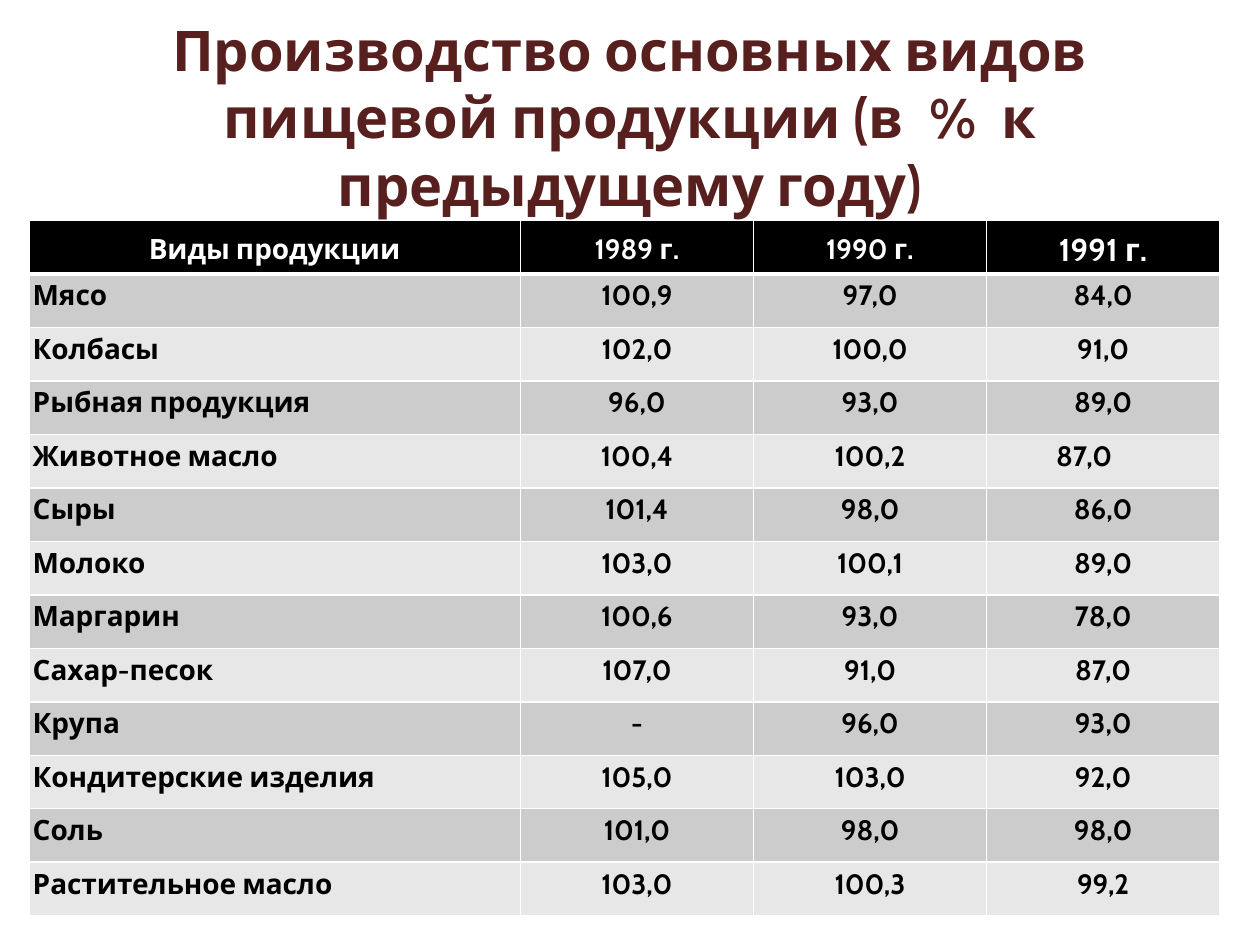
from lxml.etree import SubElement
from pptx import Presentation
from pptx.dml.color import RGBColor
from pptx.enum.text import MSO_ANCHOR, MSO_AUTO_SIZE, PP_ALIGN
from pptx.oxml.ns import qn
from pptx.util import Inches, Pt

FONT = "Cabin"
MAROON = RGBColor(0x57, 0x20, 0x1F)
BLACK = RGBColor(0, 0, 0)
WHITE = RGBColor(0xFF, 0xFF, 0xFF)
BANDS = RGBColor(0xCC, 0xCC, 0xCC), RGBColor(0xE7, 0xE7, 0xE7)

TITLE = "Производство основных видов пищевой продукции (в  %  к предыдущему году)"
HEADER = ("Виды продукции", "1989 г.", "1990 г.", "1991 г.")
PRODUCTS = [
    ("Мясо", "100,9", "97,0", "84,0"),
    ("Колбасы", "102,0", "100,0", "91,0"),
    ("Рыбная продукция", "96,0", "93,0", "89,0"),
    ("Животное масло", "100,4", "100,2", "87,0"),
    ("Сыры", "101,4", "98,0", "86,0"),
    ("Молоко", "103,0", "100,1", "89,0"),
    ("Маргарин", "100,6", "93,0", "78,0"),
    ("Сахар-песок", "107,0", "91,0", "87,0"),
    ("Крупа", "-", "96,0", "93,0"),
    ("Кондитерские изделия", "105,0", "103,0", "92,0"),
    ("Соль", "101,0", "98,0", "98,0"),
    ("Растительное масло", "103,0", "100,3", "99,2"),
]
COL_WIDTHS = (3.9, 1.85, 1.85, 1.85)
TABLE_HEIGHT = 5.52


def set_attrs(obj, values):
    for name, value in values.items():
        setattr(obj, name, value)


def write(tf, text, size, color, align, spacing=None):
    p = tf.paragraphs[0]
    set_attrs(p, {"alignment": align, "line_spacing": spacing})
    r = p.add_run()
    r.text = text
    set_attrs(r.font, {"name": FONT, "size": Pt(size), "bold": True})
    r.font.color.rgb = color


def add_title(slide):
    sp = slide.shapes.title
    set_attrs(sp, {"left": Inches(0.5), "top": Inches(0.3),
                   "width": Inches(9), "height": Inches(1.25)})
    set_attrs(sp.text_frame, {"word_wrap": True, "auto_size": MSO_AUTO_SIZE.NONE,
                              "vertical_anchor": MSO_ANCHOR.MIDDLE})
    write(sp.text_frame, TITLE, 32, MAROON, PP_ALIGN.CENTER)


def set_borders(cell, top, bottom):
    """Draw white cell borders; top and bottom are widths in points."""
    props = cell._tc.get_or_add_tcPr()
    for side, width in {"L": 1, "R": 1, "T": top, "B": bottom}.items():
        line = SubElement(props, qn(f"a:ln{side}"), w=str(Pt(width)))
        fill = SubElement(line, qn("a:solidFill"))
        SubElement(fill, qn("a:srgbClr"), val=str(WHITE))


def fill_cell(cell, text, row, col):
    header = row == 0
    set_attrs(cell, {"margin_left": Inches(0.03), "margin_right": Inches(0.03),
                     "margin_top": 0, "margin_bottom": 0,
                     "vertical_anchor": MSO_ANCHOR.MIDDLE if header else MSO_ANCHOR.TOP})
    set_borders(cell, top=3 if row == 1 else 1, bottom=3 if header else 1)
    cell.fill.solid()
    cell.fill.fore_color.rgb = BLACK if header else BANDS[(row - 1) % 2]
    write(cell.text_frame, text,
          size=18 if header and col == 3 else 16,
          color=WHITE if header else BLACK,
          align=PP_ALIGN.CENTER if header or col else PP_ALIGN.LEFT,
          spacing=1.15)


def add_production_table(slide):
    rows = [HEADER, *PRODUCTS]
    table = slide.shapes.add_table(
        len(rows), len(HEADER), Inches(0.23), Inches(1.75),
        Inches(sum(COL_WIDTHS)), Inches(TABLE_HEIGHT)).table
    for column, width in zip(table.columns, COL_WIDTHS):
        column.width = Inches(width)
    for i, values in enumerate(rows):
        table.rows[i].height = Inches(TABLE_HEIGHT / len(rows))
        for j, text in enumerate(values):
            fill_cell(table.cell(i, j), text, i, j)
    # The 1991 butter figure sits left of its column's centre.
    table.cell(4, 3).margin_right = Inches(0.33)


def main():
    prs = Presentation()
    set_attrs(prs, {"slide_width": Inches(10), "slide_height": Inches(7.5)})
    slide = prs.slides.add_slide(prs.slide_layouts[5])
    add_title(slide)
    add_production_table(slide)
    prs.save("out.pptx")


if __name__ == "__main__":
    main()
